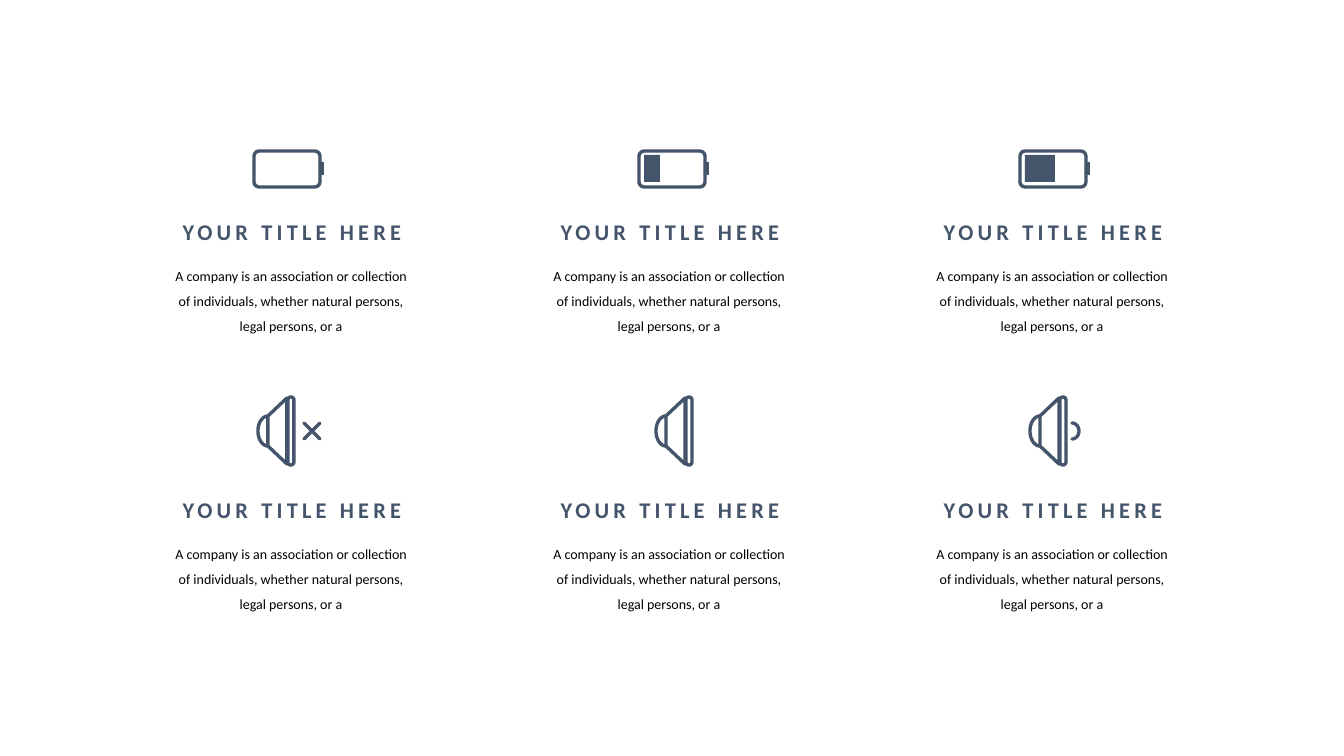
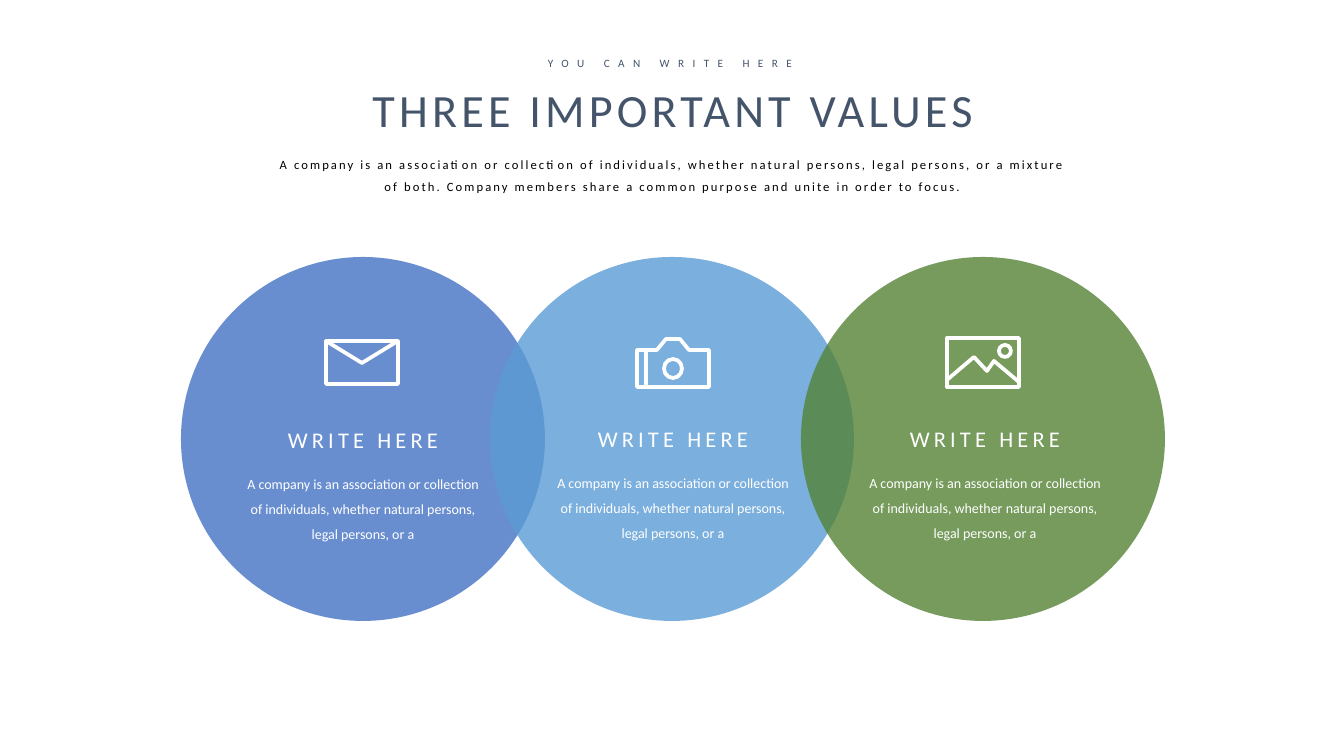
from math import cos, pi, sin

from lxml.etree import SubElement
from pptx import Presentation
from pptx.dml.color import RGBColor
from pptx.enum.shapes import MSO_CONNECTOR, MSO_SHAPE
from pptx.enum.text import MSO_AUTO_SIZE, PP_ALIGN
from pptx.oxml.ns import qn
from pptx.util import Emu, Pt

PX_PER_INCH = 100.8
FONT = "Calibri"
SLATE, BLACK, WHITE = "44546A", "000000", "FFFFFF"
BLUE, SKY, GREEN = "4472C4", "5B9BD5", "548235"
CARD_TEXT = ("A company is an association or collection of individuals, "
             "whether natural persons, legal persons, or a")
INTRO_TEXT = ("A company is an association or collection of individuals, whether natural "
              "persons, legal persons, or a mixture of both. Company members share a common "
              "purpose and unite in order to focus.")
CARD_WIDTH = 264
CIRCLE_SIZE = 364
CIRCLE_TOP = 257


def px(length):
    return Emu(round(length * 914400 / PX_PER_INCH))


def rgb(color):
    return RGBColor.from_string(color)


def add_text(slide, box, text, size, color, bold=False, tracking=0, line_spacing=1, wrap=True):
    """Add centred text; tracking is the letter spacing in points."""
    frame = slide.shapes.add_textbox(*map(px, box)).text_frame
    frame.text = text
    frame.word_wrap = wrap
    frame.auto_size = MSO_AUTO_SIZE.SHAPE_TO_FIT_TEXT
    paragraph = frame.paragraphs[0]
    paragraph.alignment = PP_ALIGN.CENTER
    paragraph.line_spacing = line_spacing
    run = paragraph.runs[0]
    run.font.name = FONT
    run.font.size = Pt(size)
    run.font.bold = bold
    run.font.color.rgb = rgb(color)
    if tracking:
        run.font._element.set("spc", str(round(tracking * 100)))


def add_filled(parent, kind, box, color, opacity=100):
    shape = parent.shapes.add_shape(kind, *map(px, box))
    shape.shadow.inherit = False
    shape.fill.solid()
    shape.fill.fore_color.rgb = rgb(color)
    shape.line.fill.background()
    if opacity < 100:
        color_element = shape.element.spPr.find(qn("a:solidFill"))[0]
        SubElement(color_element, qn("a:alpha"), val=str(opacity * 1000))


def arc(x, y, radius_x, radius_y, start, end, steps=24):
    """Points of an elliptic arc between two angles in half turns."""
    angles = [pi * (start + (end - start) * step / steps) for step in range(steps + 1)]
    return [(x + radius_x * cos(angle), y + radius_y * sin(angle)) for angle in angles]


class Icon:
    """A group of round-ended strokes, placed relative to its left and top."""

    def __init__(self, slide, left, top, color, weight):
        self.group = slide.shapes.add_group_shape()
        self.left, self.top = left, top
        self.color, self.weight = color, weight

    def place(self, x, y, width, height):
        return self.left + x, self.top + y, width, height

    def stroke(self, shape):
        shape.line.color.rgb = rgb(self.color)
        shape.line.width = Pt(self.weight)
        line = shape.element.spPr.find(qn("a:ln"))
        line.set("cap", "rnd")
        SubElement(line, qn("a:round"))

    def outline(self, shape):
        shape.shadow.inherit = False
        shape.fill.background()
        self.stroke(shape)

    def frame(self, kind, box, corner=None):
        shape = self.group.shapes.add_shape(kind, *map(px, self.place(*box)))
        if corner is not None:
            shape.adjustments[0] = corner
        self.outline(shape)

    def contours(self, *contours):
        """Draw several point lists as one freeform."""
        builder = None
        for points in contours:
            start, *others = [(px(self.left + x), px(self.top + y)) for x, y in points]
            if builder is None:
                builder = self.group.shapes.build_freeform(*start)
            else:
                builder.move_to(*start)
            builder.add_line_segments(others, close=points[0] == points[-1])
        self.outline(builder.convert_to_shape())

    def line(self, x1, y1, x2, y2):
        ends = (self.left + x1, self.top + y1, self.left + x2, self.top + y2)
        connector = self.group.shapes.add_connector(MSO_CONNECTOR.STRAIGHT, *map(px, ends))
        self.stroke(connector)
        SubElement(connector.element.spPr, qn("a:effectLst"))

    def block(self, kind, box):
        add_filled(self.group, kind, self.place(*box), self.color)


def add_battery(slide, left, top, charge):
    icon = Icon(slide, left, top, SLATE, 2.4)
    icon.frame(MSO_SHAPE.ROUNDED_RECTANGLE, (2, 2, 66, 36), corner=0.14)
    icon.block(MSO_SHAPE.ROUNDED_RECTANGLE, (67, 13, 5, 13))
    if charge:
        icon.block(MSO_SHAPE.RECTANGLE, (7, 6, charge, 27))


def add_speaker(slide, left, top, sound):
    back = arc(12, 36, -10, 15, -0.5, 0.5)
    cone = [(12, 21), (31, 3), (31, 69), (12, 51), (12, 21)]
    rim = arc(35, 5, 3, 3, 1, 2) + arc(35, 67, 3, 3, 0, 1)
    waves = {
        "muted": [[(48, 28), (64, 44)], [(48, 44), (64, 28)]],
        "silent": [],
        "low": [arc(44, 36, 7, 8, -0.5, 0.5)],
    }
    icon = Icon(slide, left, top, SLATE, 2.4)
    icon.contours(back, cone, rim + rim[:1], *waves[sound])


def add_envelope(slide, left, top):
    icon = Icon(slide, left, top, WHITE, 2.7)
    icon.frame(MSO_SHAPE.RECTANGLE, (0, 0, 72, 43))
    icon.contours([(0, 0), (36, 22), (72, 0)])


def add_camera(slide, left, top):
    icon = Icon(slide, left, top, WHITE, 2.7)
    icon.contours([(52, 11), (43, 0), (29, 0), (20, 11), (0, 11), (0, 48), (72, 48),
                   (72, 11), (52, 11)])
    icon.frame(MSO_SHAPE.OVAL, (27, 20, 18, 19))
    icon.line(9, 11, 9, 48)


def add_photo(slide, left, top):
    icon = Icon(slide, left, top, WHITE, 2.7)
    icon.frame(MSO_SHAPE.RECTANGLE, (0, 0, 72, 49))
    icon.contours([(0, 42), (27, 19), (40, 33), (47, 23), (72, 44)])
    icon.frame(MSO_SHAPE.OVAL, (52, 7, 12, 12))


def add_caption(slide, left, top, title, title_color, text_color, bold=False, title_shift=0):
    add_text(slide, (left + title_shift, top, CARD_WIDTH, 37), title, 16, title_color,
             bold=bold, tracking=3, wrap=False)
    add_text(slide, (left, top + 41, CARD_WIDTH, 84), CARD_TEXT, 10, text_color,
             line_spacing=1.5)


def add_header(slide):
    add_text(slide, (357, 76, 632, 67), "THREE IMPORTANT VALUES", 33, SLATE,
             tracking=3, wrap=False)
    add_text(slide, (497, 51, 346, 24), "YOU CAN WRITE HERE", 8, SLATE, tracking=6)
    add_text(slide, (268, 144, 808, 53), INTRO_TEXT, 9, BLACK, tracking=1.5, line_spacing=1.5)


def build_icon_grid(slide):
    column_lefts = (159, 537, 920)
    rows = (
        (213, 149, add_battery, ((252, 0), (637, 16), (1018, 30))),
        (491, 395, add_speaker, ((256, "muted"), (654, "silent"), (1028, "low"))),
    )
    for caption_top, icon_top, add_icon, icons in rows:
        for left, (icon_left, state) in zip(column_lefts, icons):
            add_caption(slide, left, caption_top, "YOUR TITLE HERE", SLATE, BLACK,
                        bold=True, title_shift=1)
            add_icon(slide, icon_left, icon_top, state)


def build_values(slide):
    values = (
        (181, BLUE, 231, 421, add_envelope, 326, 341),
        (490, SKY, 541, 420, add_camera, 637, 339),
        (801, GREEN, 853, 420, add_photo, 947, 338),
    )
    for left, color, *_ in values:
        add_filled(slide, MSO_SHAPE.OVAL, (left, CIRCLE_TOP, CIRCLE_SIZE, CIRCLE_SIZE),
                   color, opacity=80)
    add_header(slide)
    for _, _, text_left, text_top, add_icon, icon_left, icon_top in values:
        add_icon(slide, icon_left, icon_top)
        add_caption(slide, text_left, text_top, "WRITE HERE", WHITE, WHITE)


def main():
    presentation = Presentation()
    presentation.slide_width, presentation.slide_height = px(1344), px(756)
    blank = presentation.slide_layouts[6]
    for build in (build_icon_grid, build_values):
        build(presentation.slides.add_slide(blank))
    presentation.save("out.pptx")


if __name__ == "__main__":
    main()
